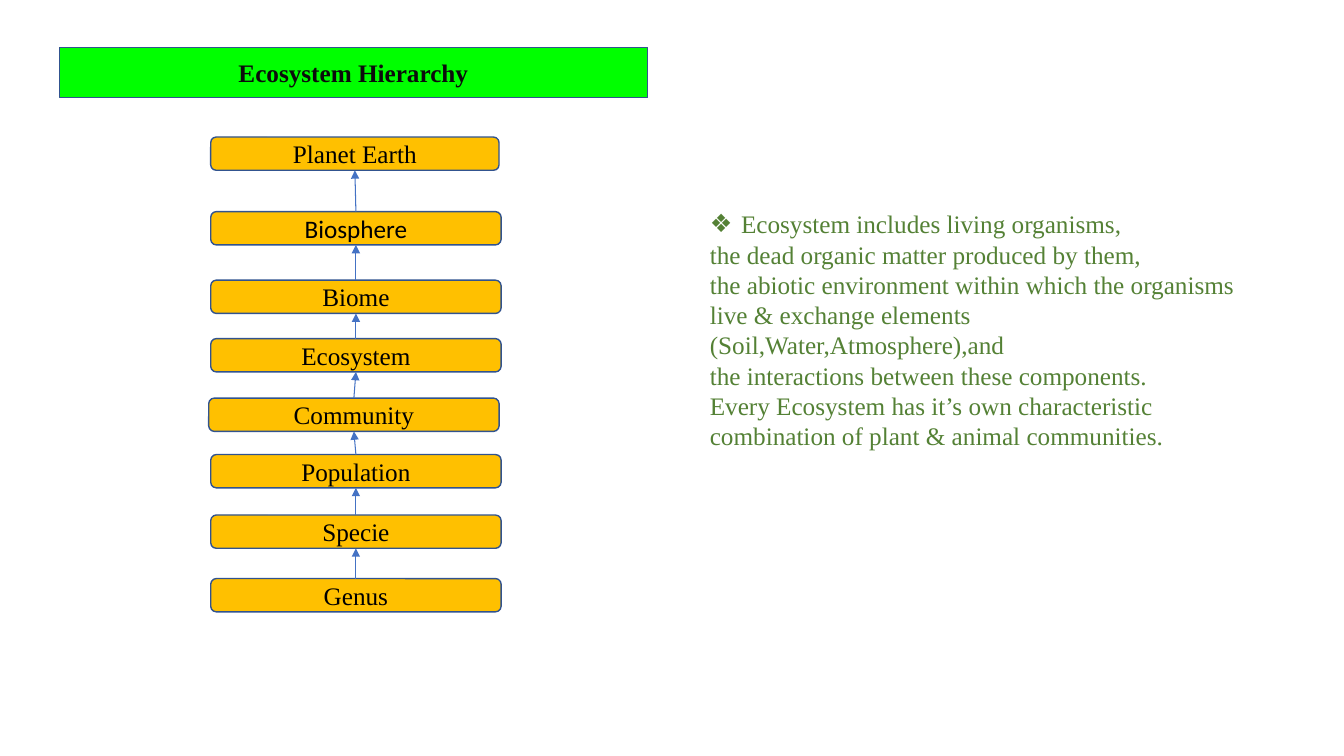
from itertools import pairwise

from lxml.etree import SubElement
from pptx import Presentation
from pptx.dml.color import RGBColor
from pptx.enum.shapes import MSO_CONNECTOR, MSO_SHAPE
from pptx.enum.text import MSO_ANCHOR, MSO_AUTO_SIZE, PP_ALIGN
from pptx.oxml import parse_xml
from pptx.oxml.ns import nsdecls, qn
from pptx.util import Inches, Pt

COLORS = {
    "heading": "00FF00",
    "heading_text": "0C0C0C",
    "level": "FFC000",
    "level_text": "000000",
    "outline": "31538F",
    "arrow": "4472C4",
    "description": "548135",
}
SERIF = "Times New Roman"
LEVEL_WIDTH = 2.88
LEVELS = [
    ("Planet Earth", 2.09, 1.36, 2.86, SERIF),
    ("Biosphere", 2.09, 2.1, LEVEL_WIDTH, "Calibri"),
    ("Biome", 2.09, 2.78, LEVEL_WIDTH, SERIF),
    ("Ecosystem", 2.09, 3.36, LEVEL_WIDTH, SERIF),
    ("Community", 2.07, 3.95, LEVEL_WIDTH, SERIF),
    ("Population", 2.09, 4.51, LEVEL_WIDTH, SERIF),
    ("Specie", 2.09, 5.11, LEVEL_WIDTH, SERIF),
    ("Genus", 2.09, 5.74, LEVEL_WIDTH, SERIF),
]
DESCRIPTION = [
    "Ecosystem includes living organisms,",
    "the dead organic matter produced by them,",
    "the abiotic environment within which the organisms live & exchange elements "
    "(Soil,Water,Atmosphere),and",
    "the interactions between these components.",
    "Every Ecosystem has it’s own characteristic combination of plant & animal communities.",
]


class HierarchySlide:
    """Holds the text style and the current slide."""

    def __init__(self, slide, size=18):
        """Store the slide and the common text size."""
        self.slide = slide
        self.size = Pt(size)

    def place(self, shape, left, top, width, height):
        """Move and resize a shape."""
        shape.left, shape.top = Inches(left), Inches(top)
        shape.width, shape.height = Inches(width), Inches(height)

    def add_text(self, paragraph, text, color, font=SERIF, bold=False):
        """Add one formatted run to a paragraph."""
        run = paragraph.add_run()
        run.text = text
        run.font.name = font
        run.font.size = self.size
        run.font.bold = bold
        run.font.color.rgb = RGBColor.from_string(COLORS[color])

    def decorate(self, shape, fill):
        """Fill and outline a box and centre its text."""
        shape.fill.solid()
        shape.fill.fore_color.rgb = RGBColor.from_string(COLORS[fill])
        shape.line.color.rgb = RGBColor.from_string(COLORS["outline"])
        shape.line.width = Pt(1)
        shape.text_frame.auto_size = MSO_AUTO_SIZE.NONE
        shape.text_frame.word_wrap = True
        shape.text_frame.vertical_anchor = MSO_ANCHOR.MIDDLE
        shape.text_frame.paragraphs[0].alignment = PP_ALIGN.CENTER

    def heading(self, text, *box):
        """Turn the title placeholder into a rounded banner."""
        title = self.slide.shapes.title
        self.place(title, *box)
        geometry = f'<a:prstGeom {nsdecls("a")} prst="roundRect"><a:avLst/></a:prstGeom>'
        title.element.spPr.insert(1, parse_xml(geometry))
        self.decorate(title, "heading")
        self.add_text(title.text_frame.paragraphs[0], text, "heading_text", bold=True)

    def level(self, text, left, top, width, font):
        """Add one rounded box of the hierarchy."""
        shape = self.slide.shapes.add_shape(
            MSO_SHAPE.ROUNDED_RECTANGLE,
            Inches(left), Inches(top), Inches(width), Inches(0.33),
        )
        shape.shadow.inherit = False
        self.decorate(shape, "level")
        self.add_text(shape.text_frame.paragraphs[0], text, "level_text", font)
        return shape

    def arrow(self, lower, upper):
        """Connect the top of a lower box to the bottom of an upper box."""
        connector = self.slide.shapes.add_connector(MSO_CONNECTOR.STRAIGHT, 0, 0, 0, 0)
        connector.begin_connect(lower, 0)
        connector.end_connect(upper, 2)
        connector.line.color.rgb = RGBColor.from_string(COLORS["arrow"])
        connector.line.width = Pt(0.75)
        properties = connector.element.spPr
        SubElement(properties.find(qn("a:ln")), qn("a:tailEnd"), type="triangle")
        SubElement(properties, qn("a:effectLst"))

    def bullet(self, paragraph, character=None):
        """Give a paragraph a hanging bullet, or none at all."""
        properties = paragraph._p.get_or_add_pPr()
        indent = Inches(0.31) if character else 0
        properties.set("marL", str(indent))
        properties.set("indent", str(-indent))
        if character:
            color = SubElement(properties, qn("a:buClr"))
            SubElement(color, qn("a:srgbClr"), val=COLORS["description"])
            SubElement(properties, qn("a:buChar"), char=character)
        else:
            SubElement(properties, qn("a:buNone"))

    def description(self, lines, *box):
        """Fill the body placeholder with the definition."""
        body = self.slide.placeholders[1]
        self.place(body, *box)
        frame = body.text_frame
        frame.auto_size = MSO_AUTO_SIZE.NONE
        frame.word_wrap = True
        frame.vertical_anchor = MSO_ANCHOR.TOP
        for index, line in enumerate(lines):
            paragraph = frame.add_paragraph() if index else frame.paragraphs[0]
            self.bullet(paragraph, None if index else "❖")
            paragraph.space_before = Pt(0)
            self.add_text(paragraph, line, "description")


def main():
    """Build and save the slide."""
    presentation = Presentation()
    presentation.slide_width = Inches(13.33)
    presentation.slide_height = Inches(7.5)
    slide = presentation.slides.add_slide(presentation.slide_layouts[1])
    hierarchy = HierarchySlide(slide)
    hierarchy.heading("Ecosystem Hierarchy", 0.59, 0.47, 5.83, 0.5)
    boxes = [hierarchy.level(*level) for level in LEVELS]
    for upper, lower in pairwise(boxes):
        hierarchy.arrow(lower, upper)
    hierarchy.description(DESCRIPTION, 6.94, 2.02, 5.44, 2.52)
    presentation.save("out.pptx")


if __name__ == "__main__":
    main()
